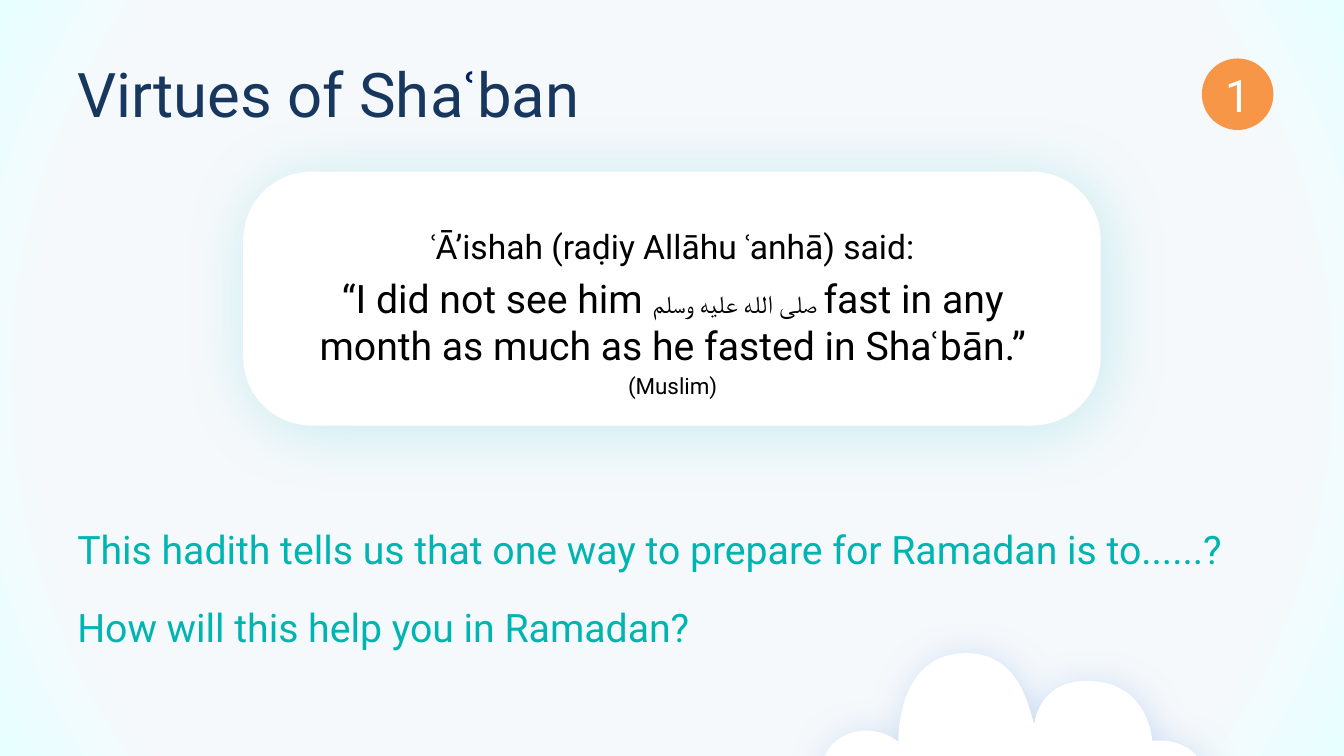
from dataclasses import dataclass

from lxml import etree
from pptx import Presentation, util as u
from pptx.dml.color import RGBColor
from pptx.enum import shapes, text
from pptx.oxml import parse_xml
from pptx.oxml.ns import nsdecls, qn

WIDTH, HEIGHT = u.Inches(13.33), u.Inches(7.5)
LEFT_MARGIN = 0.05  # share of the slide's width


@dataclass(frozen=True)
class Theme:
    font: str = "Roboto"
    navy: str = "17375E"
    deep_navy: str = "002060"
    teal: str = "00B4B1"
    orange: str = "F79646"
    white: str = "FFFFFF"
    black: str = "000000"
    cloud_shade: str = "8EB4E3"
    sky: str = "F6F9FC"
    sky_edge: str = "E7FFFF"
    title: int = 44
    badge: int = 32
    body: int = 28
    intro: int = 24
    arabic: int = 18
    source: int = 16


THEME = Theme()

# Start point, then cubic curves as (control, control, end), in inches
CLOUD_START = (10.87, 6.76)
CLOUD_CURVES = [
    ((10.4, 6.71), (10.27, 7.04), (10.26, 7.19)),
    ((10.21, 7.08), (10.14, 6.47), (9.57, 6.48)),
    ((8.96, 6.49), (8.91, 7.17), (8.91, 7.36)),
    ((8.78, 7.26), (8.64, 7.23), (8.48, 7.26)),
    ((8.33, 7.29), (8.19, 7.41), (8.16, 7.57)),
    ((8.14, 7.67), (8.18, 7.78), (8.26, 7.84)),
    ((8.31, 7.87), (8.38, 7.88), (8.44, 7.88)),
    ((8.99, 7.93), (11.35, 7.93), (11.55, 7.9)),
    ((11.71, 7.88), (11.89, 7.82), (11.91, 7.67)),
    ((11.93, 7.55), (11.84, 7.44), (11.74, 7.4)),
    ((11.63, 7.35), (11.54, 7.34), (11.43, 7.35)),
    ((11.42, 7.28), (11.37, 6.81), (10.87, 6.76)),
]


def box(left, top, width, height):
    """Turn shares of the slide's size into lengths."""
    return (round(left * WIDTH), round(top * HEIGHT),
            round(width * WIDTH), round(height * HEIGHT))


def place(shape, bounds):
    shape.left, shape.top, shape.width, shape.height = bounds


def add_run(paragraph, words, *, size, color, bold=False, tracking=0):
    run = paragraph.add_run()
    run.text = words
    run.font.name = THEME.font
    run.font.size = u.Pt(size)
    run.font.bold = bold
    run.font.color.rgb = RGBColor.from_string(color)
    properties = run.font._element
    etree.SubElement(properties, qn("a:cs")).set("typeface", THEME.font)
    if tracking:
        properties.set("spc", str(tracking * 100))


def write(shape, paragraphs, *, color, align=text.PP_ALIGN.LEFT,
          anchor=text.MSO_ANCHOR.TOP, line_spacing=None, bullets=True):
    """Fill a shape; each paragraph is a list of (words, size, run options)."""
    frame = shape.text_frame
    frame.word_wrap = True
    frame.auto_size = text.MSO_AUTO_SIZE.NONE
    frame.vertical_anchor = anchor
    for index, runs in enumerate(paragraphs):
        paragraph = frame.add_paragraph() if index else frame.paragraphs[0]
        if not bullets:
            properties = paragraph._p.get_or_add_pPr()
            properties.set("marL", "0")
            properties.set("indent", "0")
            etree.SubElement(properties, qn("a:buNone"))
        paragraph.alignment = align
        paragraph.line_spacing = line_spacing
        paragraph.space_before = u.Pt(0.2 * runs[0][1] if index else 0)
        for words, size, options in runs:
            add_run(paragraph, words, size=size, **{"color": color, **options})


def paint(shape, color):
    shape.shadow.inherit = False
    shape.fill.solid()
    shape.fill.fore_color.rgb = RGBColor.from_string(color)
    shape.line.fill.background()


def add_glow_shadow(shape, color, *, opacity, blur, distance):
    effects = shape._element.spPr.find(qn("a:effectLst"))
    effects.append(parse_xml(
        f'<a:outerShdw {nsdecls("a")} blurRad="{u.Pt(blur)}" '
        f'dist="{u.Pt(distance)}" dir="{45 * 60000}" algn="tl" rotWithShape="0">'
        f'<a:srgbClr val="{color}"><a:alpha val="{opacity * 1000}"/></a:srgbClr>'
        '</a:outerShdw>'))


def set_radial_background(slide):
    slide.element.cSld.insert(0, parse_xml(
        f'<p:bg {nsdecls("p", "a")}><p:bgPr><a:gradFill rotWithShape="1"><a:gsLst>'
        f'<a:gs pos="81000"><a:srgbClr val="{THEME.sky}"/></a:gs>'
        f'<a:gs pos="100000"><a:srgbClr val="{THEME.sky_edge}"/></a:gs></a:gsLst>'
        '<a:path path="circle"><a:fillToRect l="50000" t="50000" r="50000" b="50000"/>'
        '</a:path></a:gradFill><a:effectLst/></p:bgPr></p:bg>'))


def bend_segments(shape, curves):
    """Turn each straight segment of a freeform into a cubic curve."""
    segments = list(shape._element.spPr.iter(qn("a:lnTo")))
    for segment, curve in zip(segments, curves):
        segment.tag = qn("a:cubicBezTo")
        for child in list(segment):
            segment.remove(child)
        for x, y in curve:
            point = etree.SubElement(segment, qn("a:pt"))
            point.set("x", str(u.Inches(x) - shape.left))
            point.set("y", str(u.Inches(y) - shape.top))


def add_cloud(slide):
    start, *ends = [tuple(map(u.Inches, point)) for point in
                    [CLOUD_START] + [curve[-1] for curve in CLOUD_CURVES]]
    builder = slide.shapes.build_freeform(*start)
    builder.add_line_segments(ends, close=True)
    cloud = builder.convert_to_shape()
    bend_segments(cloud, CLOUD_CURVES)
    paint(cloud, THEME.white)
    add_glow_shadow(cloud, THEME.cloud_shade, opacity=40, blur=27, distance=3)


def add_title(slide):
    title = slide.shapes.title
    place(title, box(LEFT_MARGIN, 0.04, 0.9, 1 / 6))
    size = THEME.title
    write(title, [[
        ("Virtues of Sh", size, {}),
        ("a", size, {"tracking": -2}),
        ("ʿ", size, {"color": THEME.deep_navy, "tracking": 2, "bold": True}),
        ("ban", size, {}),
    ]], color=THEME.navy, anchor=text.MSO_ANCHOR.MIDDLE)


def add_questions(slide):
    body = slide.placeholders[1]
    place(body, box(LEFT_MARGIN, 0.657, 0.881, 0.66))
    questions = ["This hadith tells us that one way to prepare for Ramadan is to......?",
                 "How will this help you in Ramadan?"]
    write(body, [[(question, THEME.body, {})] for question in questions],
          color=THEME.teal, line_spacing=1.5, bullets=False)


def add_badge(slide, number):
    badge = slide.shapes.add_shape(
        shapes.MSO_SHAPE.OVAL, u.Inches(11.92), u.Inches(0.58), u.Inches(0.71), u.Inches(0.71))
    paint(badge, THEME.orange)
    write(badge, [[(number, THEME.badge, {})]], color=THEME.white,
          align=text.PP_ALIGN.CENTER, anchor=text.MSO_ANCHOR.MIDDLE)


def add_hadith(slide):
    card = slide.shapes.add_shape(
        shapes.MSO_SHAPE.ROUNDED_RECTANGLE, *box(0.181, 0.227, 0.638, 0.336))
    card.adjustments[0] = 0.27
    paint(card, THEME.white)
    add_glow_shadow(card, THEME.teal, opacity=20, blur=50, distance=5)
    quote = slide.shapes.add_textbox(*box(0.228, 0.292, 0.545, 0.66))
    size = THEME.body
    write(quote, [
        [("ʿĀ’ishah (raḍiy Allāhu ʿanhā) said:", THEME.intro, {})],
        [("“I did not see him ", size, {}),
         ("صلى الله عليه وسلم ", THEME.arabic, {}),
         ("fast in any month as much as he fasted in Sha", size, {}),
         ("ʿ", size, {"tracking": 2}),
         ("bān.”", size, {})],
        [("(Muslim)", THEME.source, {})],
    ], color=THEME.black, align=text.PP_ALIGN.CENTER)


def main():
    presentation = Presentation()
    presentation.slide_width, presentation.slide_height = WIDTH, HEIGHT
    slide = presentation.slides.add_slide(presentation.slide_layouts[1])
    set_radial_background(slide)
    add_title(slide)
    add_questions(slide)
    add_badge(slide, "1")
    add_hadith(slide)
    add_cloud(slide)
    presentation.save("out.pptx")


if __name__ == "__main__":
    main()
